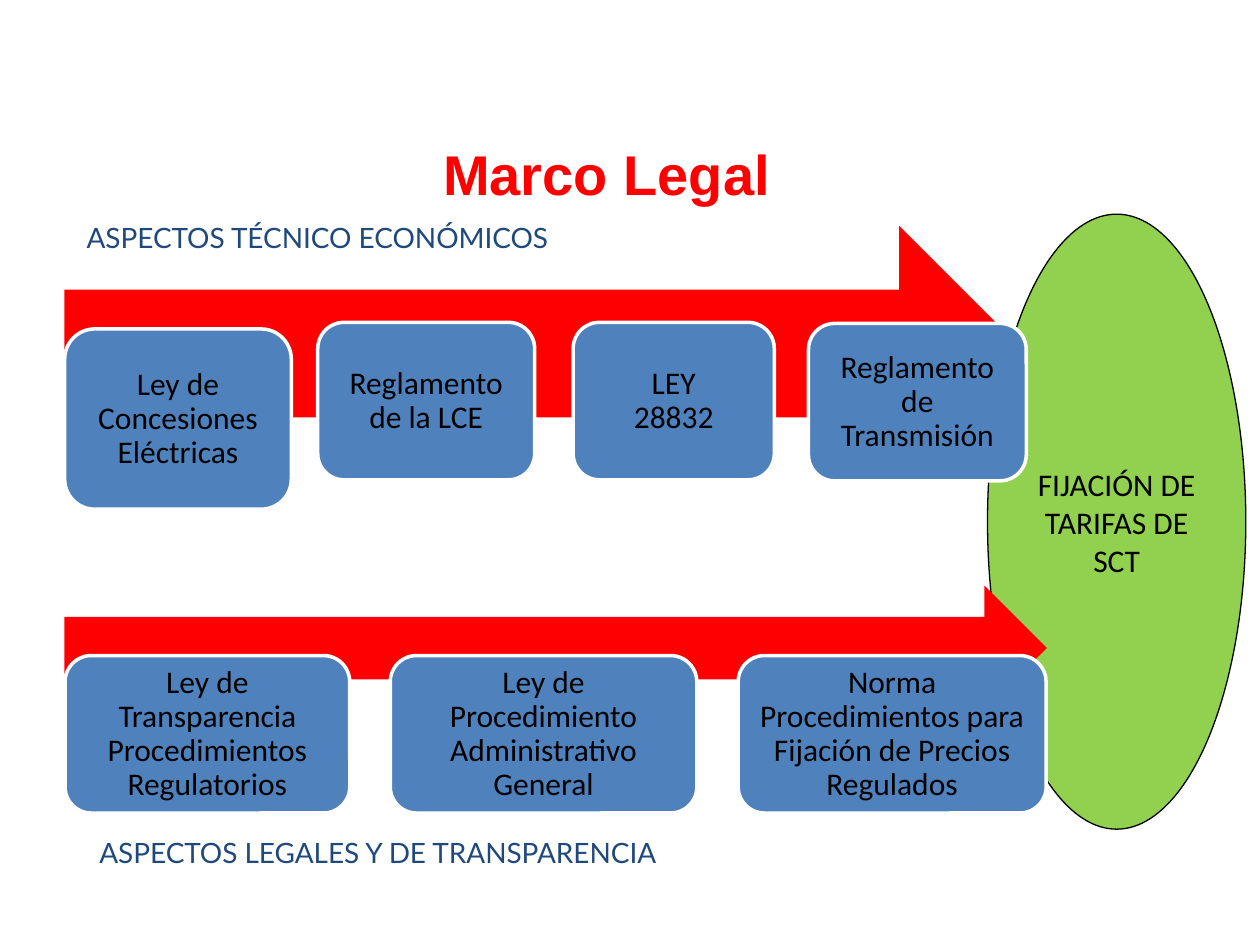
"""Build the "Marco Legal" slide: two arrows of laws leading to one result."""
from pptx import Presentation
from pptx.dml.color import RGBColor as RGB
from pptx.enum.shapes import MSO_SHAPE as Kind
from pptx.enum.text import MSO_ANCHOR as Anchor, MSO_AUTO_SIZE as Auto, PP_ALIGN as Align
from pptx.util import Pt

COLORS = {"red": "FF0000", "blue": "4F81BD", "navy": "1F497D",
          "green": "92D050", "black": "000000", "white": "FFFFFF"}


def draw(shapes, kind, place, fill, line=None, width=0):
    shape = shapes.add_shape(kind, *map(Pt, place))
    shape.shadow.inherit = False
    shape.fill.solid()
    shape.fill.fore_color.rgb = RGB.from_string(COLORS[fill])
    if line:
        shape.line.color.rgb = RGB.from_string(COLORS[line])
        shape.line.width = Pt(width)
    else:
        shape.line.fill.background()
    return shape


def write(shape, text, size, color, font):
    frame = shape.text_frame
    frame.word_wrap = True
    frame.vertical_anchor = Anchor.MIDDLE
    par = frame.paragraphs[0]
    par.text = text
    par.alignment = Align.CENTER
    par.font.size = Pt(size)
    par.font.name = font
    par.font.color.rgb = RGB.from_string(COLORS[color])
    return par


prs = Presentation()
prs.slide_width, prs.slide_height = Pt(720), Pt(540)
slide = prs.slides.add_slide(prs.slide_layouts[5])
slide.background.fill.solid()
slide.background.fill.fore_color.rgb = RGB.from_string(COLORS["white"])

goal = draw(slide.shapes, Kind.OVAL, (564.3, 122.4, 147.6, 351.4), "green", "black", 0.75)
write(goal, "FIJACIÓN DE TARIFAS DE SCT", 18, "black", "Calibri")

title = slide.shapes.title
title.left, title.top, title.width, title.height = map(Pt, (150.5, 75, 392.4, 48.2))
write(title, "Marco Legal", 32, "red", "Arial").font.bold = True

captions = [
    ("ASPECTOS TÉCNICO ECONÓMICOS", (-14.4, 122.4, 391.7, 26.6)),
    ("ASPECTOS LEGALES Y DE TRANSPARENCIA", (-8.6, 473.8, 449.3, 26.6)),
]
for text, place in captions:
    box = slide.shapes.add_textbox(*map(Pt, place))
    write(box, text, 16, "navy", "Lato")
    box.text_frame.auto_size = Auto.SHAPE_TO_FIT_TEXT

flows = [
    ((36.8, 129, 550, 146), [
        ("Ley de Concesiones Eléctricas", (37, 188, 129.5, 103)),
        ("Reglamento de la LCE", (181.6, 184.2, 124, 90)),
        ("LEY\v28832", (327.5, 184.2, 115, 90)),
        ("Reglamento de Transmisión", (462, 184.8, 124.5, 90)),
    ]),
    ((36.8, 334.6, 561.4, 71.5), [
        ("Ley de Transparencia Procedimientos Regulatorios", (37.2, 374.6, 162.7, 90)),
        ("Ley de Procedimiento Administrativo General", (223, 374.6, 175.2, 90)),
        ("Norma Procedimientos para Fijación de Precios Regulados", (421.8, 374.6, 176, 90)),
    ]),
]
for arrow, laws in flows:
    group = slide.shapes.add_group_shape()
    draw(group.shapes, Kind.RIGHT_ARROW, arrow, "red")
    for text, place in laws:
        law = draw(group.shapes, Kind.ROUNDED_RECTANGLE, place, "blue", "white", 2)
        write(law, text, 18, "black", "Calibri").line_spacing = 0.9
        frame = law.text_frame
        frame.margin_left = frame.margin_right = Pt(5)
        frame.margin_top = frame.margin_bottom = Pt(5)

prs.save("out.pptx")
